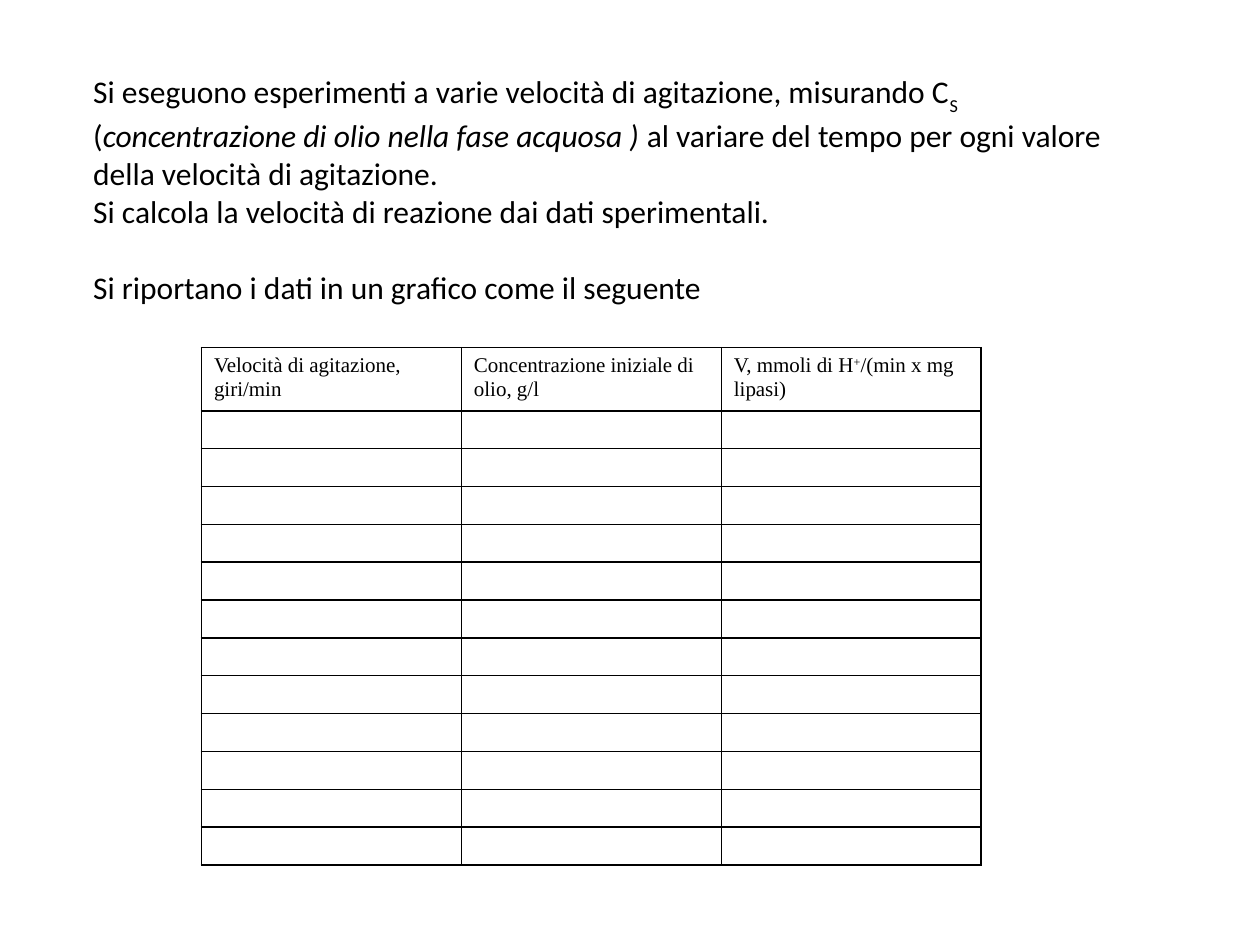
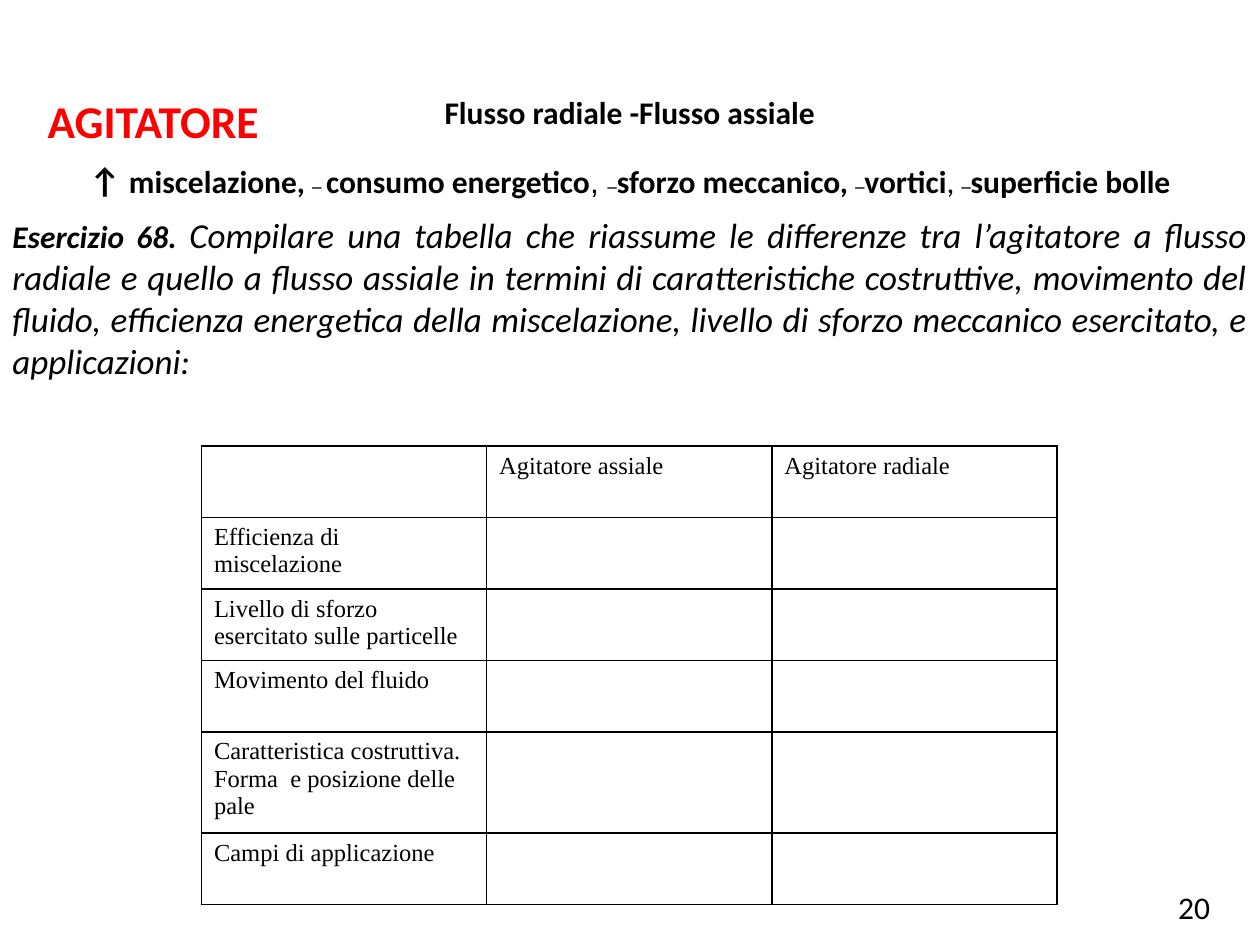
from lxml import etree
from pptx import Presentation
from pptx.dml.color import RGBColor
from pptx.enum.text import MSO_ANCHOR, MSO_AUTO_SIZE, PP_ALIGN
from pptx.oxml.ns import qn
from pptx.util import Cm, Pt

CENTER, JUSTIFY = PP_ALIGN.CENTER, PP_ALIGN.JUSTIFY
MIDDLE, GROW = MSO_ANCHOR.MIDDLE, MSO_AUTO_SIZE.SHAPE_TO_FIT_TEXT
COLORS = {"text": "000000", "title": "FF0000", "cell": "FFFFFF", "border": "000000"}
SANS, SERIF = "Calibri", "Times New Roman"


def add_text(p, text, size=18, font=SANS, color="text", bold=False, italic=False, base=0):
    r = p.add_run()
    r.text = text
    f = r.font
    f.name, f.size, f.bold, f.italic = font, Pt(size), bold, italic
    f.color.rgb = RGBColor.from_string(COLORS[color])
    if base:
        r._r.get_or_add_rPr().set("baseline", str(base * 1000))


def add_grid(s, top, col_width, row_heights, texts, size, filled):
    gf = s.shapes.add_table(len(row_heights), 3, Cm(4.06), Cm(top),
                            Cm(3 * col_width), Cm(sum(row_heights)))
    tbl = gf.table
    tbl.first_row = tbl.horz_banding = False
    for col in tbl.columns:
        col.width = Cm(col_width)
    for i, height in enumerate(row_heights):
        tbl.rows[i].height = Cm(height)
        for j in range(3):
            cell = tbl.cell(i, j)
            p = cell.text_frame.paragraphs[0]
            runs = texts.get((i, j), [])
            for text, base in runs:
                add_text(p, text, size=size, font=SERIF, base=base)
            if not runs:
                etree.SubElement(p._p, qn("a:endParaRPr"), sz=str(size * 100))
            tcPr = cell._tc.get_or_add_tcPr()
            for side in ("a:lnL", "a:lnR", "a:lnT", "a:lnB"):
                ln = etree.SubElement(tcPr, qn(side), w=str(Pt(1)))
                fill = etree.SubElement(ln, qn("a:solidFill"))
                etree.SubElement(fill, qn("a:srgbClr"), val=COLORS["border"])
            if filled:
                cell.fill.solid()
                cell.fill.fore_color.rgb = RGBColor.from_string(COLORS["cell"])
            else:
                cell.fill.background()


prs = Presentation()
prs.slide_width, prs.slide_height = Cm(25.4), Cm(19.05)
blank = prs.slide_layouts[6]

s = prs.slides.add_slide(blank)
tf = s.shapes.add_textbox(Cm(1.63), Cm(1.32), Cm(21.08), Cm(4.88)).text_frame
tf.word_wrap, tf.auto_size = True, GROW
p = tf.paragraphs[0]
add_text(p, "Si eseguono esperimenti a varie velocità di agitazione, misurando C")
add_text(p, "S", base=-30)
add_text(p, " (")
add_text(p, "concentrazione di olio nella fase acquosa ) ", italic=True)
add_text(p, "al variare del tempo per ogni valore della velocità di agitazione.")
add_text(tf.add_paragraph(), "Si calcola la velocità di reazione dai dati sperimentali.")
p = tf.add_paragraph()
p.space_before = Pt(22)
add_text(p, "Si riportano i dati in un grafico come il seguente")

headers = {
    (0, 0): [("Velocità di agitazione, giri/min", 0)],
    (0, 1): [("Concentrazione iniziale di olio, g/l", 0)],
    (0, 2): [("V, mmoli di H", 0), ("+", 30), ("/(min x mg lipasi)", 0)],
}
add_grid(s, 7.01, 5.24, [1.27] + [0.76] * 12, headers, 12, False)

s = prs.slides.add_slide(blank)
labels = [
    ("AGITATORE", 0.71, 1.75, 6.12, 1.35, False, dict(size=26, color="title", bold=True)),
    ("20", 23.5, 17.78, 1.35, 1.27, False, {}),
    ("Flusso radiale -Flusso assiale", 0, 1.75, 25.4, 1.02, True, dict(bold=True)),
]
for text, left, top, width, height, centered, fmt in labels:
    tf = s.shapes.add_textbox(Cm(left), Cm(top), Cm(width), Cm(height)).text_frame
    tf.word_wrap, tf.auto_size = centered, GROW
    p = tf.paragraphs[0]
    if centered:
        tf.vertical_anchor = MIDDLE
        p.alignment = CENTER
    add_text(p, text, **fmt)

tf = s.shapes.add_textbox(0, Cm(2.9), Cm(25.4), Cm(4.88)).text_frame
tf.word_wrap, tf.auto_size = True, GROW
tf.margin_top = Cm(0.3)
p = tf.paragraphs[0]
p.alignment = CENTER
low = dict(font=SERIF, bold=True, base=-25)
effects = [
    ("↑ ", dict(size=20, bold=True)),
    ("miscelazione, ", dict(bold=True)),
    ("¯ ", low),
    ("consumo energetico", dict(bold=True)),
    (", ", dict(font="Arial")),
    ("¯", low),
    ("sforzo meccanico, ", dict(bold=True)),
    ("¯", low),
    ("vortici", dict(bold=True)),
    (", ", {}),
    ("¯", low),
    ("superficie bolle", dict(bold=True)),
]
for text, fmt in effects:
    add_text(p, text, **fmt)
p = tf.add_paragraph()
p.alignment = JUSTIFY
p.space_before = Pt(5)
add_text(p, "Esercizio 68. ", bold=True, italic=True)
add_text(p, "Compilare una tabella che riassume le differenze tra l’agitatore a flusso radiale "
            "e quello a flusso assiale in termini di caratteristiche costruttive, movimento del "
            "fluido, efficienza energetica della miscelazione, livello di sforzo meccanico "
            "esercitato, e applicazioni:", size=20, italic=True)

criteria = ["Efficienza di miscelazione", "Livello di sforzo esercitato sulle particelle",
            "Movimento del fluido", "Caratteristica costruttiva. Forma  e posizione delle pale",
            "Campi di applicazione"]
texts = {(0, 1): [("Agitatore assiale", 0)], (0, 2): [("Agitatore radiale", 0)]}
for i, text in enumerate(criteria, 1):
    texts[i, 0] = [(text, 0)]
add_grid(s, 8.99, 5.75, [1.44] * 4 + [2.04, 1.44], texts, 14, True)

prs.save("out.pptx")
